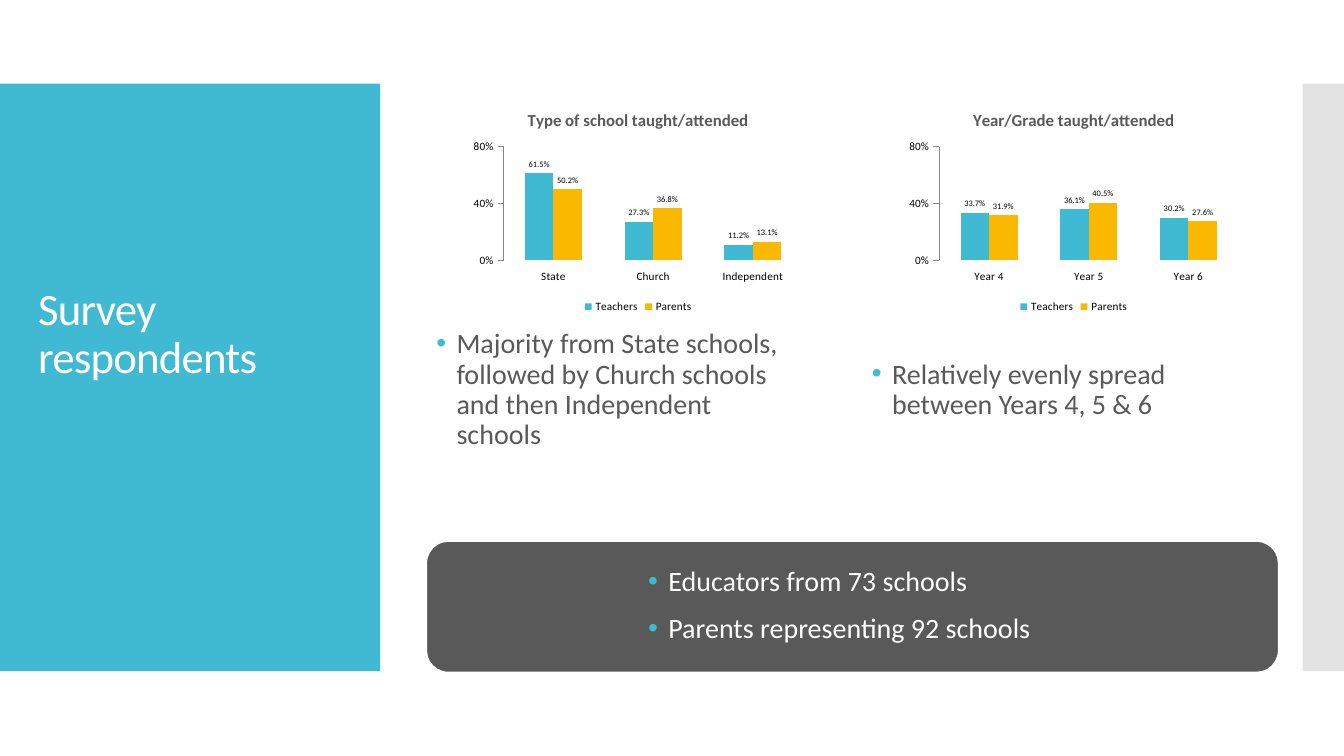
from lxml import etree
from pptx import Presentation
from pptx import util as u
from pptx.chart.data import CategoryChartData
from pptx.dml.color import RGBColor
from pptx.enum import chart as ch
from pptx.enum import shapes, text
from pptx.oxml.ns import qn

FONT = "Calibri"
TEAL, AMBER, GREY, WHITE = "40BAD2", "FAB900", "595959", "FFFFFF"
COLUMNS = [
    (4.23, 3.57, "Majority from State schools, followed by Church schools and then Independent schools",
     "Type of school taught/attended", ["State", "Church", "Independent"],
     [0.615, 0.273, 0.112], [0.502, 0.368, 0.131]),
    (8.55, 3.27, "Relatively evenly spread between Years 4, 5 & 6",
     "Year/Grade taught/attended", ["Year 4", "Year 5", "Year 6"],
     [0.337, 0.361, 0.302], [0.319, 0.405, 0.276]),
]


def rgb(value):
    return RGBColor.from_string(value)


def box(left, top, width, height):
    return [u.Inches(length) for length in (left, top, width, height)]


def style_font(font, size, color, bold=False):
    font.name = FONT
    font.size = u.Pt(size)
    font.bold = bold
    font.color.rgb = rgb(color)


def add_panel(slide, kind, place, fill, line=None, opacity=None):
    shape = slide.shapes.add_shape(kind, *box(*place))
    shape.shadow.inherit = False
    shape.fill.solid()
    shape.fill.fore_color.rgb = rgb(fill)
    if opacity is not None:
        color = shape.fill._xPr.find(".//" + qn("a:srgbClr"))
        etree.SubElement(color, qn("a:alpha")).set("val", str(opacity * 1000))
    if line:
        shape.line.color.rgb = rgb(line)
        shape.line.width = u.Pt(0.85)
    else:
        shape.line.fill.background()


def add_text_frame(slide, place, anchor):
    frame = slide.shapes.add_textbox(*box(*place)).text_frame
    frame.word_wrap = True
    frame.vertical_anchor = anchor
    return frame


def add_title(slide, lines):
    frame = add_text_frame(slide, (0.28, 1.23, 3.22, 2.62), text.MSO_ANCHOR.BOTTOM)
    paragraph = frame.paragraphs[0]
    paragraph.line_spacing = 0.9
    for index, line in enumerate(lines):
        if index:
            paragraph.add_line_break()
        run = paragraph.add_run()
        run.text = line
        style_font(run.font, 32, WHITE)
        run._r.get_or_add_rPr().set("spc", "-60")


def add_bullet_mark(paragraph):
    properties = paragraph._p.get_or_add_pPr()
    properties.set("marL", str(u.Inches(0.2)))
    properties.set("indent", str(u.Inches(-0.2)))
    color = etree.SubElement(properties, qn("a:buClr"))
    etree.SubElement(color, qn("a:srgbClr")).set("val", TEAL)
    etree.SubElement(properties, qn("a:buFont")).set("typeface", "Arial")
    etree.SubElement(properties, qn("a:buChar")).set("char", "•")


def add_bullets(slide, place, items, color, anchor):
    frame = add_text_frame(slide, place, anchor)
    for index, item in enumerate(items):
        paragraph = frame.add_paragraph() if index else frame.paragraphs[0]
        paragraph.line_spacing = 0.9
        paragraph.space_before = u.Pt(12)
        add_bullet_mark(paragraph)
        run = paragraph.add_run()
        run.text = item
        style_font(run.font, 20, color)


def style_axes(chart):
    category_axis, value_axis = chart.category_axis, chart.value_axis
    for axis in (category_axis, value_axis):
        axis.has_major_gridlines = False
        axis.major_tick_mark = ch.XL_TICK_MARK.OUTSIDE
        axis.minor_tick_mark = ch.XL_TICK_MARK.NONE
        style_font(axis.tick_labels.font, 8, "000000")
    category_axis.format.line.fill.background()
    value_axis.format.line.color.rgb = rgb("868686")
    value_axis.minimum_scale = 0
    value_axis.maximum_scale = 0.8
    value_axis.major_unit = 0.4
    value_axis.tick_labels.number_format = "0%"
    value_axis.tick_labels.number_format_is_linked = False


def style_series(series, color):
    series.format.fill.solid()
    series.format.fill.fore_color.rgb = rgb(color)
    labels = series.data_labels
    labels.show_value = True
    labels.position = ch.XL_LABEL_POSITION.OUTSIDE_END
    labels.number_format = "0.0%"
    labels.number_format_is_linked = False
    style_font(labels.font, 6, "000000")


def add_column_chart(slide, place, title, categories, teachers, parents):
    data = CategoryChartData(number_format="0.0%")
    data.categories = categories
    data.add_series("Teachers", teachers)
    data.add_series("Parents", parents)
    chart = slide.shapes.add_chart(
        ch.XL_CHART_TYPE.COLUMN_CLUSTERED, *box(*place), data).chart
    style_font(chart.font, 10, "000000")

    chart.has_title = True
    run = chart.chart_title.text_frame.paragraphs[0].add_run()
    run.text = title
    style_font(run.font, 12, GREY, bold=True)
    chart.chart_title.include_in_layout = False

    chart.has_legend = True
    chart.legend.position = ch.XL_LEGEND_POSITION.BOTTOM
    chart.legend.include_in_layout = False
    style_font(chart.legend.font, 8, "000000")

    style_axes(chart)
    plot = chart.plots[0]
    plot.gap_width = 150
    plot.overlap = 0
    plot.vary_by_categories = False
    for series, color in zip(plot.series, (TEAL, AMBER)):
        style_series(series, color)


def main():
    presentation = Presentation()
    presentation.slide_width = u.Inches(13.33)
    presentation.slide_height = u.Inches(7.5)
    slide = presentation.slides.add_slide(presentation.slide_layouts[6])

    rectangle = shapes.MSO_SHAPE.RECTANGLE
    add_panel(slide, rectangle, (0, 0.83, 3.77, 5.83), TEAL)
    add_panel(slide, rectangle, (12.92, 0.83, 0.41, 5.83), "C8C8C8", opacity=50)
    add_title(slide, ["Survey", "respondents"])

    for left, height, finding, *chart_content in COLUMNS:
        add_bullets(slide, (left, 0.95, 3.8, height), [finding], GREY, text.MSO_ANCHOR.BOTTOM)
        add_column_chart(slide, (left + 0.4, 0.95, 3.4, 2.2), *chart_content)

    add_panel(slide, shapes.MSO_SHAPE.ROUNDED_RECTANGLE, (4.23, 5.37, 8.45, 1.3), GREY, line=WHITE)
    add_bullets(slide, (6.33, 5.58, 4.32, 0.88),
                ["Educators from 73 schools", "Parents representing 92 schools"],
                WHITE, text.MSO_ANCHOR.TOP)
    presentation.save("out.pptx")


if __name__ == "__main__":
    main()
